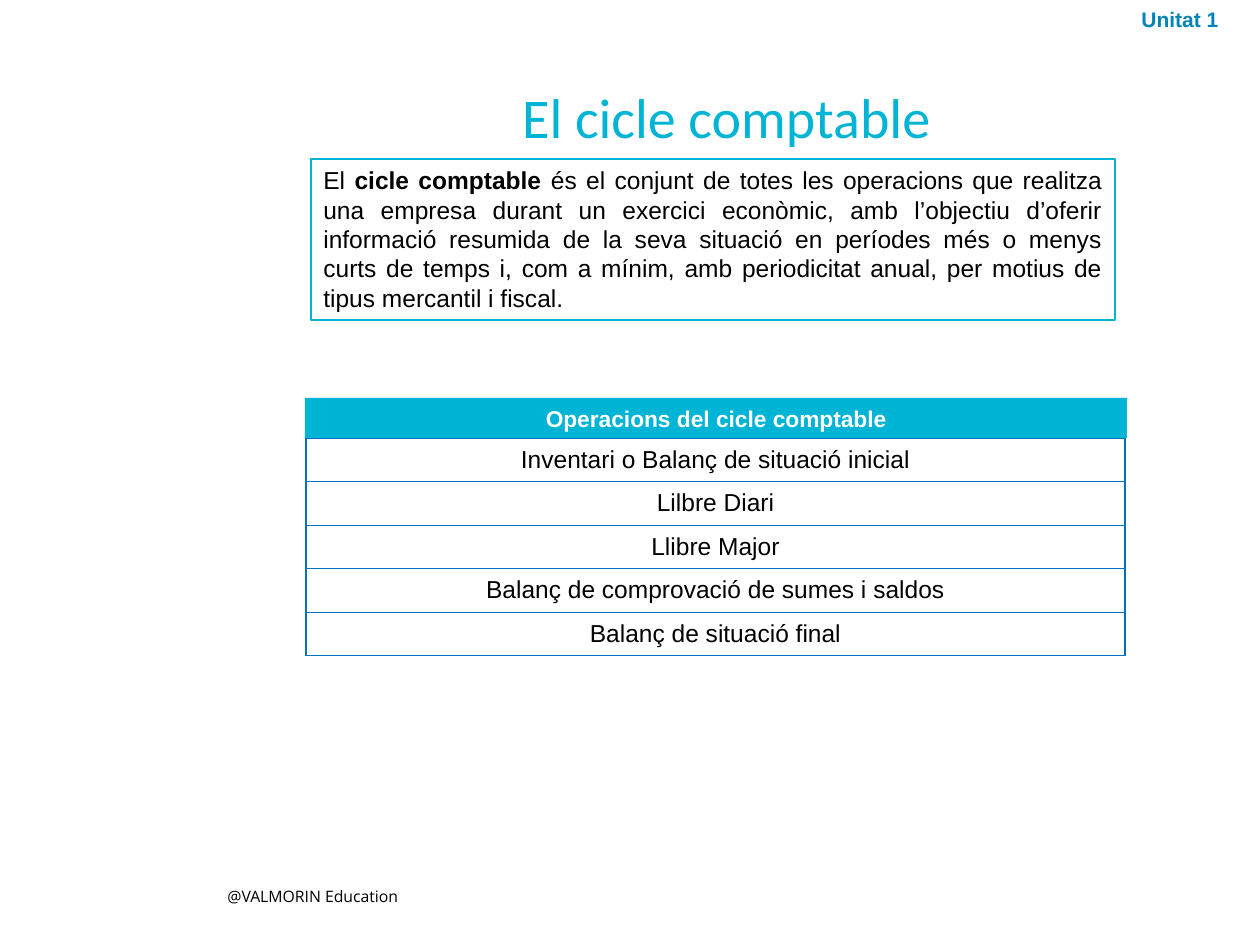
from lxml import etree
from pptx import Presentation
from pptx.dml.color import RGBColor
from pptx.enum.shapes import MSO_SHAPE
from pptx.enum.text import MSO_ANCHOR, PP_ALIGN
from pptx.oxml.ns import qn
from pptx.util import Emu, Pt

RECTANGLE = MSO_SHAPE.RECTANGLE
TOP, MIDDLE = MSO_ANCHOR.TOP, MSO_ANCHOR.MIDDLE
LEFT, CENTER, JUSTIFY = PP_ALIGN.LEFT, PP_ALIGN.CENTER, PP_ALIGN.JUSTIFY

PIXELS_PER_INCH = 126
COLORS = {
    "black": "000000",
    "white": "FFFFFF",
    "cyan": "00B4D5",
    "unit": "0083BB",
    "border": "0070C0",
}
DEFINITION = [
    ("El ", False),
    ("cicle comptable ", True),
    ("és el conjunt de totes les operacions que realitza una empresa durant un "
     "exercici econòmic, amb l’objectiu d’oferir informació resumida de la seva "
     "situació en períodes més o menys curts de temps i, com a mínim, amb "
     "periodicitat anual, per motius de tipus mercantil i fiscal.", False),
]
OPERATIONS = [
    "Inventari o Balanç de situació inicial",
    "Lilbre Diari",
    "Llibre Major",
    "Balanç de comprovació de sumes i saldos",
    "Balanç de situació final",
]


def px(length):
    return Emu(round(length * 914400 / PIXELS_PER_INCH))


def color(name):
    return RGBColor.from_string(COLORS[name])


def write(frame, runs, size, ink, align=LEFT, font="Arial", bold=None, anchor=TOP):
    """Fill a text frame with one paragraph of (text, bold) runs."""
    frame.word_wrap = True
    frame.vertical_anchor = anchor
    paragraph = frame.paragraphs[0]
    paragraph.alignment = align
    paragraph.font.name = font
    paragraph.font.size = Pt(size)
    paragraph.font.bold = bold
    paragraph.font.color.rgb = color(ink)
    for text, strong in runs:
        run = paragraph.add_run()
        run.text = text
        if strong:
            run.font.bold = True
    return paragraph


def add_label(slide, box, text, size, ink, **style):
    shape = slide.shapes.add_textbox(*map(px, box))
    return write(shape.text_frame, [(text, False)], size, ink, **style)


def add_box(slide, box, fill, line, runs, size, ink, **style):
    shape = slide.shapes.add_shape(RECTANGLE, *map(px, box))
    shape.shadow.inherit = False
    shape.fill.solid()
    shape.fill.fore_color.rgb = color(fill)
    if line:
        shape.line.color.rgb = color(line)
        shape.line.width = Pt(0.75)
    else:
        shape.line.fill.background()
    write(shape.text_frame, runs, size, ink, **style)


def set_borders(cell, name):
    properties = cell._tc.get_or_add_tcPr()
    for index, side in enumerate(("lnL", "lnR", "lnT", "lnB")):
        line = etree.Element(qn(f"a:{side}"), w=str(Pt(0.75)))
        fill = etree.SubElement(line, qn("a:solidFill"))
        etree.SubElement(fill, qn("a:srgbClr"), val=COLORS[name])
        properties.insert(index, line)


def add_operations_table(slide, box):
    frame = slide.shapes.add_table(len(OPERATIONS), 1, *map(px, box))
    table = frame.table
    table.first_row = False
    table.horz_banding = False
    for row, operation in enumerate(OPERATIONS):
        cell = table.cell(row, 0)
        cell.fill.background()
        set_borders(cell, "border")
        cell.margin_left = cell.margin_right = Pt(7.2)
        cell.margin_top = cell.margin_bottom = Pt(3.6)
        cell.vertical_anchor = MIDDLE
        paragraph = cell.text_frame.paragraphs[0]
        paragraph.text = operation
        paragraph.alignment = CENTER
        paragraph.font.name = "Arial"
        paragraph.font.size = Pt(14)
        paragraph.font.color.rgb = color("black")


def main():
    presentation = Presentation()
    presentation.slide_width = px(1260)
    presentation.slide_height = px(945)
    slide = presentation.slides.add_slide(presentation.slide_layouts[6])

    # Footer, unit and title
    add_label(slide, (215, 881, 242, 32), "@VALMORIN Education", 9, "black",
              font="Open Sans")
    add_label(slide, (1129, 0, 131, 38), "Unitat 1", 12, "unit", bold=True)
    title = add_label(slide, (193, 86, 1067, 68), "El cicle comptable", 32, "cyan",
                      align=CENTER, font="Calibri", anchor=MIDDLE)
    title.line_spacing = 0.9

    # Definition
    add_box(slide, (311, 159, 804, 161), "white", "cyan", DEFINITION, 14, "black",
            align=JUSTIFY)

    # Operations with their heading bar
    add_operations_table(slide, (306, 438, 819, 218))
    add_box(slide, (305, 398, 822, 40), "cyan", None,
            [("Operacions del cicle comptable", False)], 13, "white",
            align=CENTER, bold=True, anchor=MIDDLE)

    presentation.save("out.pptx")


if __name__ == "__main__":
    main()
